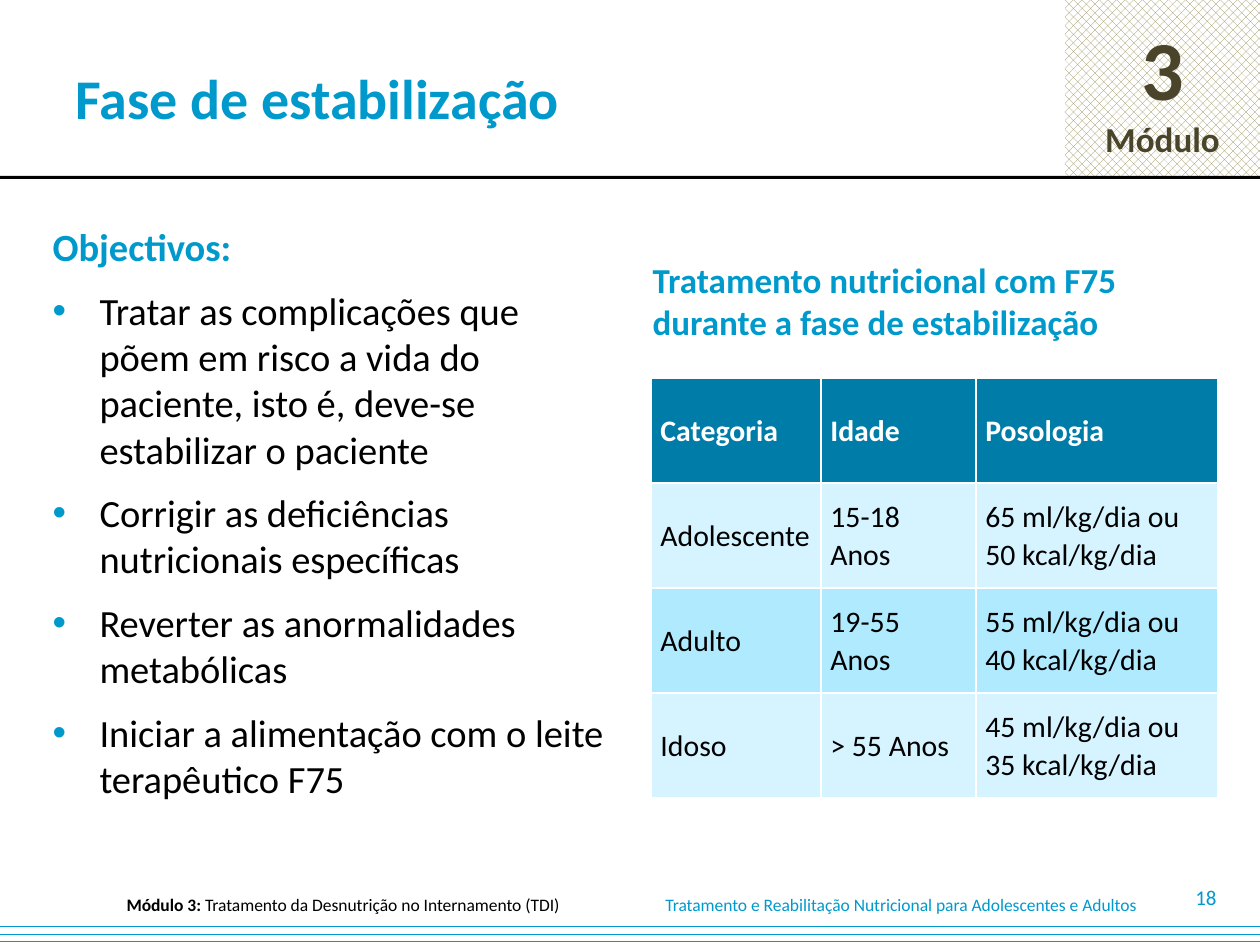
"""Builds the stabilisation phase slide with its goals and dosage table."""
from lxml import etree
from pptx import Presentation, util as u
from pptx.dml.color import RGBColor
from pptx.enum import dml, shapes, text
from pptx.oxml.ns import qn

COLORS = {"accent": "0099CC", "header": "007CA8", "light": "D5F4FF", "mid": "AFEAFF",
          "black": "000000", "white": "FFFFFF", "olive": "4A452A", "tan": "948A54"}
TITLE = "Fase de estabilização"
GOALS_HEADING = "Objectivos:"
GOALS = [
    "Tratar as complicações que põem em risco a vida do paciente, isto é, deve-se estabilizar o paciente",
    "Corrigir as deficiências nutricionais específicas",
    "Reverter as anormalidades metabólicas",
    "Iniciar a alimentação com o leite terapêutico F75",
]
TABLE_HEADING = "Tratamento nutricional com F75 durante a fase de estabilização"
ROWS = [
    ("Categoria", "Idade", "Posologia"),
    ("Adolescente", "15-18 Anos", "65 ml/kg/dia ou\n50 kcal/kg/dia"),
    ("Adulto", "19-55 Anos", "55 ml/kg/dia ou\n40 kcal/kg/dia"),
    ("Idoso", "> 55 Anos", "45 ml/kg/dia ou\n35 kcal/kg/dia"),
]
ROW_FILLS = ["header", "light", "mid", "light"]
COL_WIDTHS = [170, 155, 242]
ROW_HEIGHT = 105
MODULE = [("3", 48), ("Módulo", 20)]
FOOTER = [("Módulo 3: ", True), ("Tratamento da Desnutrição no Internamento (TDI)", False)]
PROGRAMME = "Tratamento e Reabilitação Nutricional para Adolescentes e Adultos"
PAGE = "18"

ALIGN = text.PP_ALIGN
MIDDLE = text.MSO_ANCHOR.MIDDLE
PATTERN = dml.MSO_PATTERN


def px(n):
    return u.Emu(round(n * 914400 / 126))


def rgb(name):
    return RGBColor.from_string(COLORS[name])


def write(p, content, size=10, color="black", bold=False, align=ALIGN.LEFT, after=0, spacing=1.0):
    p.alignment = align
    p.space_before, p.space_after, p.line_spacing = u.Pt(0), u.Pt(after), spacing
    r = p.add_run()
    r.text = content
    r.font.name, r.font.size, r.font.bold = "Calibri", u.Pt(size), bold
    r.font.color.rgb = rgb(color)


def paragraphs(tf):
    yield tf.paragraphs[0]
    while True:
        yield tf.add_paragraph()


def place(sp, left, top, width, height):
    sp.left, sp.top, sp.width, sp.height = map(px, (left, top, width, height))
    tf = sp.text_frame
    tf.word_wrap, tf.auto_size = True, text.MSO_AUTO_SIZE.NONE
    return tf


def set_bullet(p, indent=0, color=None):
    pPr = p._p.get_or_add_pPr()
    pPr.set("marL", str(px(indent)))
    pPr.set("indent", str(px(-indent)))
    if color:
        clr = etree.SubElement(pPr, qn("a:buClr"))
        etree.SubElement(clr, qn("a:srgbClr"), val=COLORS[color])
        etree.SubElement(pPr, qn("a:buChar"), char="•")
    else:
        etree.SubElement(pPr, qn("a:buNone"))


def add_box(slide, left, top, width, height, fill, pattern=None):
    sp = slide.shapes.add_shape(shapes.MSO_SHAPE.RECTANGLE, *map(px, (left, top, width, height)))
    sp.shadow.inherit = False
    sp.line.fill.background()
    if pattern:
        sp.fill.patterned()
        sp.fill.pattern = pattern
        sp.fill.fore_color.rgb, sp.fill.back_color.rgb = rgb(fill), rgb("white")
    else:
        sp.fill.solid()
        sp.fill.fore_color.rgb = rgb(fill)
    return sp


def add_label(slide, left, top, width, height):
    tf = place(slide.shapes.add_textbox(0, 0, 0, 0), left, top, width, height)
    tf.vertical_anchor = MIDDLE
    return tf.paragraphs[0]


def set_borders(cell):
    tcPr = cell._tc.get_or_add_tcPr()
    for i, side in enumerate(("lnL", "lnR", "lnT", "lnB")):
        ln = etree.Element(qn(f"a:{side}"), w=str(u.Pt(1)))
        fill = etree.SubElement(ln, qn("a:solidFill"))
        etree.SubElement(fill, qn("a:srgbClr"), val=COLORS["white"])
        tcPr.insert(i, ln)


def add_dosage_table(slide, left, top):
    size = sum(COL_WIDTHS), ROW_HEIGHT * len(ROWS)
    table = slide.shapes.add_table(len(ROWS), len(COL_WIDTHS), *map(px, (left, top, *size))).table
    for col, width in zip(table.columns, COL_WIDTHS):
        col.width = px(width)
    for i, (row, fill) in enumerate(zip(ROWS, ROW_FILLS)):
        table.rows[i].height = px(ROW_HEIGHT)
        for j, content in enumerate(row):
            cell = table.cell(i, j)
            cell.fill.solid()
            cell.fill.fore_color.rgb = rgb(fill)
            cell.vertical_anchor = MIDDLE
            cell.margin_left = cell.margin_right = u.Pt(5.4)
            cell.margin_top = cell.margin_bottom = 0
            set_borders(cell)
            for line, p in zip(content.split("\n"), paragraphs(cell.text_frame)):
                write(p, line, size=17, color="black" if i else "white", bold=i == 0,
                      align=ALIGN.JUSTIFY, spacing=1.05)


def main():
    prs = Presentation()
    prs.slide_width, prs.slide_height = px(1260), px(945)
    slide = prs.slides.add_slide(prs.slide_layouts[3])
    title, goals, table_heading = slide.placeholders

    tf = place(title, 63, 0, 1134, 195)
    tf.vertical_anchor = MIDDLE
    write(tf.paragraphs[0], TITLE, size=32, color="accent", bold=True)

    tf = place(goals, 40, 217, 580, 600)
    write(tf.paragraphs[0], GOALS_HEADING, size=22, color="accent", bold=True, after=10)
    set_bullet(tf.paragraphs[0])
    for goal in GOALS:
        p = tf.add_paragraph()
        write(p, goal, size=22, after=10)
        set_bullet(p, 47, "accent")

    tf = place(table_heading, 640, 252, 577, 600)
    write(tf.paragraphs[0], TABLE_HEADING, size=20, color="accent", bold=True, after=10)
    set_bullet(tf.paragraphs[0])
    add_dosage_table(slide, 651, 378)

    tf = add_box(slide, 1065, 0, 195, 176, "tan", PATTERN.PERCENT_50).text_frame
    tf.vertical_anchor = MIDDLE
    for (content, size), p in zip(MODULE, paragraphs(tf)):
        write(p, content, size=size, color="olive", bold=True, align=ALIGN.CENTER)
    add_box(slide, 0, 176, 1260, 3, "black")
    add_box(slide, 0, 919, 1260, 26, "accent", PATTERN.DASHED_HORIZONTAL)

    p = add_label(slide, 37, 892, 612, 25)
    for content, bold in FOOTER:
        write(p, content, bold=bold, align=ALIGN.CENTER)
    write(add_label(slide, 653, 892, 510, 25), PROGRAMME, color="accent")
    write(add_label(slide, 935, 872, 294, 50), PAGE, size=12, color="accent", align=ALIGN.RIGHT)
    prs.save("out.pptx")


if __name__ == "__main__":
    main()
